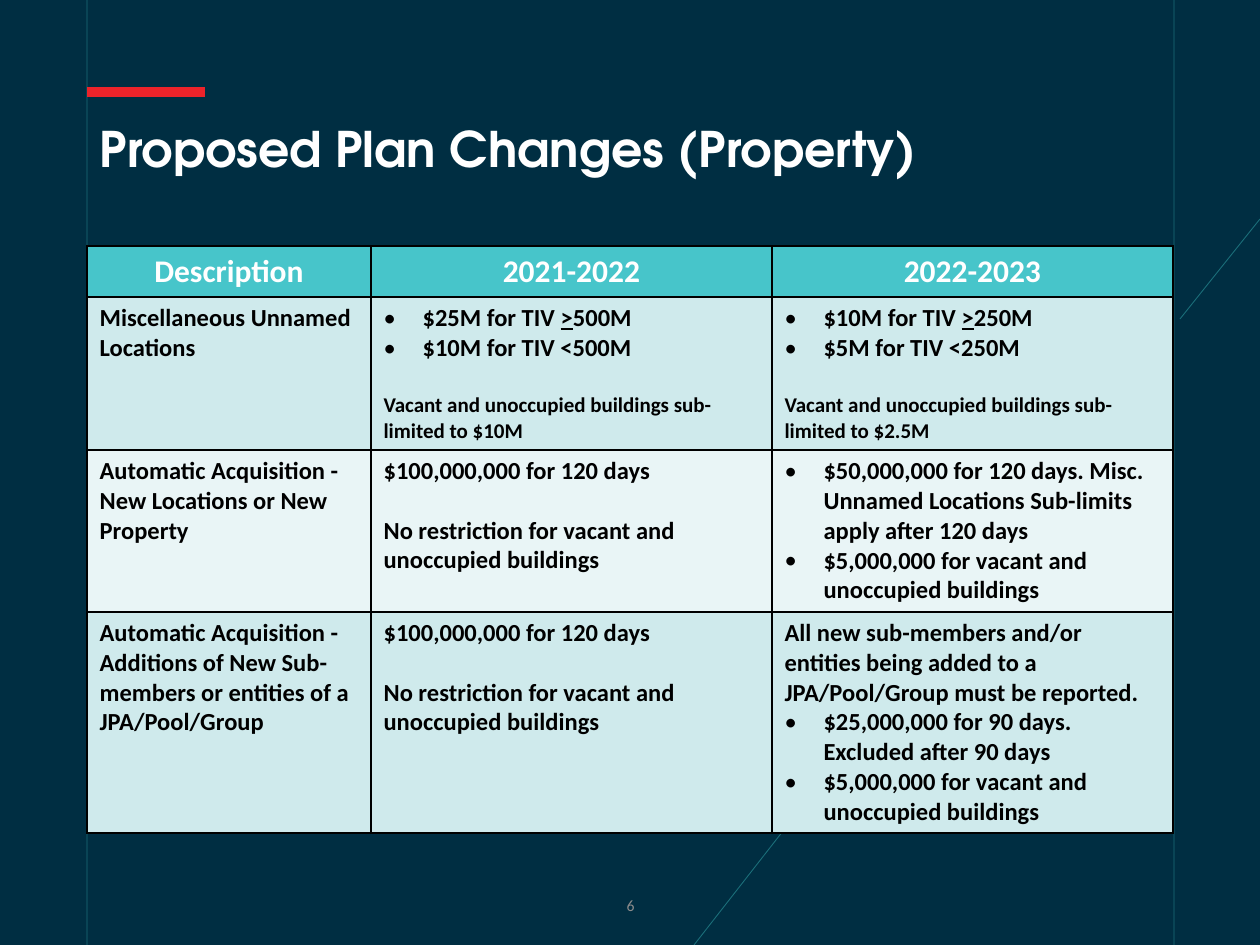
from lxml import etree
from pptx import Presentation
from pptx.dml.color import RGBColor
from pptx.enum.shapes import MSO_CONNECTOR
from pptx.enum.text import MSO_ANCHOR, MSO_AUTO_SIZE, PP_ALIGN
from pptx.oxml.ns import qn
from pptx.util import Pt

STRAIGHT = MSO_CONNECTOR.STRAIGHT
TOP, MIDDLE = MSO_ANCHOR.TOP, MSO_ANCHOR.MIDDLE
LEFT, CENTER = PP_ALIGN.LEFT, PP_ALIGN.CENTER
NO_FIT = MSO_AUTO_SIZE.NONE

NAVY = RGBColor(0x00, 0x2E, 0x42)
TEAL = RGBColor(0x2E, 0x9B, 0x9F)
RED = RGBColor(0xEC, 0x23, 0x2A)
GRAY = RGBColor(0x8C, 0x8C, 0x8C)
WHITE = RGBColor(0xFF, 0xFF, 0xFF)
BLACK = RGBColor(0x00, 0x00, 0x00)
HEADER = RGBColor(0x47, 0xC5, 0xCA)
BANDS = (RGBColor(0xCF, 0xEA, 0xEC), RGBColor(0xE9, 0xF5, 0xF6))

BODY_FONT, TITLE_FONT = "Calibri", "TeX Gyre Adventor"
SLIDE_W, SLIDE_H = 1260, 945
HEADINGS = ("Description", "2021-2022", "2022-2023")
COL_WIDTHS = (284, 401, 401)
ROW_HEIGHTS = (51, 153, 162, 221)
UNRESTRICTED = [
    ("plain", "$100,000,000 for 120 days"),
    ("gap", "No restriction for vacant and unoccupied buildings"),
]
VACANT = ("bullet", "$5,000,000 for vacant and unoccupied buildings")


def px(n):
    """Convert slide pixels to EMU."""
    return round(n * 914400 / 126)


def misc_limits(high, low, threshold, vacant):
    """Return the paragraphs for one year's unnamed-location limits."""
    return [
        ("bullet", f"{high} for TIV _>_{threshold}"),
        ("bullet", f"{low} for TIV <{threshold}"),
        ("note", f"Vacant and unoccupied buildings sub-limited to {vacant}"),
    ]


ROWS = (
    ([("plain", "Miscellaneous Unnamed Locations")],
     misc_limits("$25M", "$10M", "500M", "$10M"),
     misc_limits("$10M", "$5M", "250M", "$2.5M")),
    ([("plain", "Automatic Acquisition - New Locations or New Property")],
     UNRESTRICTED,
     [("bullet", "$50,000,000 for 120 days. Misc. Unnamed Locations "
                 "Sub-limits apply after 120 days"), VACANT]),
    ([("plain", "Automatic Acquisition - Additions of New Sub-members "
                "or entities of a JPA/Pool/Group")],
     UNRESTRICTED,
     [("plain", "All new sub-members and/or entities being added to a "
                "JPA/Pool/Group must be reported."),
      ("bullet", "$25,000,000 for 90 days. Excluded after 90 days"), VACANT]),
)


def style_font(font, size, color, name=BODY_FONT, bold=True):
    """Set the typeface, size, weight and colour of a font."""
    font.name, font.size, font.bold = name, Pt(size), bold
    font.color.rgb = color


def add_line(slide, x1, y1, x2, y2, color=TEAL, width=0.5, alpha=60):
    """Draw a flat straight line of the given opacity."""
    line = slide.shapes.add_connector(STRAIGHT, px(x1), px(y1), px(x2), px(y2))
    line.line.color.rgb = color
    line.line.width = Pt(width)
    sp_pr = line._element.spPr
    if alpha < 100:
        rgb = sp_pr.find(".//" + qn("a:srgbClr"))
        etree.SubElement(rgb, qn("a:alpha"), val=str(alpha * 1000))
    etree.SubElement(sp_pr, qn("a:effectLst"))


def add_backdrop(slide, x, y, w, h):
    """Colour the background and draw its guide lines and accent bar."""
    slide.background.fill.solid()
    slide.background.fill.fore_color.rgb = NAVY
    add_line(slide, x + 1168, y + 338, x + 694, y + h)
    for guide in (87, 1174):
        add_line(slide, x + guide, y, x + guide, y + h)
    add_line(slide, x + 87, y + 92, x + 205, y + 92, RED, 6, 100)
    add_line(slide, x + w, y + 219, x + 1180, y + 319)


def add_title(slide, x, y, w, h):
    """Fill and place the title placeholder."""
    sp = slide.shapes.title
    sp.left, sp.top, sp.width, sp.height = map(px, (x, y, w, h))
    tf = sp.text_frame
    tf.text = "Proposed Plan Changes (Property)"
    tf.word_wrap, tf.auto_size, tf.vertical_anchor = True, NO_FIT, TOP
    p = tf.paragraphs[0]
    p.alignment, p.line_spacing = LEFT, 0.9
    style_font(p.runs[0].font, 28, WHITE, TITLE_FONT)


def add_page_number(slide, x, y, w, h):
    """Place the centred page number."""
    tf = slide.shapes.add_textbox(*map(px, (x, y, w, h))).text_frame
    tf.word_wrap, tf.vertical_anchor = True, MIDDLE
    p = tf.paragraphs[0]
    p.text, p.alignment = "6", CENTER
    style_font(p.runs[0].font, 9, GRAY, bold=False)


def finish_cell(cell, color):
    """Give a cell black borders and a solid fill."""
    tc_pr = cell._tc.get_or_add_tcPr()
    for side in ("a:lnL", "a:lnR", "a:lnT", "a:lnB"):
        ln = etree.SubElement(tc_pr, qn(side), w=str(Pt(1)))
        fill = etree.SubElement(ln, qn("a:solidFill"))
        etree.SubElement(fill, qn("a:srgbClr"), val=str(BLACK))
    cell.fill.solid()
    cell.fill.fore_color.rgb = color


def write_paragraph(p, kind, text):
    """Write one body paragraph, underlining text between underscores."""
    if kind == "bullet":
        p_pr = p._p.get_or_add_pPr()
        p_pr.set("marL", str(px(39)))
        p_pr.set("indent", str(px(-39)))
        etree.SubElement(p_pr, qn("a:buFont"), typeface=BODY_FONT)
        etree.SubElement(p_pr, qn("a:buChar"), char="•")
    elif kind in ("gap", "note"):
        p.space_before = Pt(17)
    for i, part in enumerate(text.split("_")):
        r = p.add_run()
        r.text = part
        style_font(r.font, 12 if kind == "note" else 14, BLACK)
        if i % 2:
            r.font.underline = True


def add_changes_table(slide, x, y, w, h):
    """Build the table comparing the two policy years."""
    frame = slide.shapes.add_table(
        len(ROW_HEIGHTS), len(COL_WIDTHS), *map(px, (x, y, w, h)))
    table = frame.table
    for column, width in zip(table.columns, COL_WIDTHS):
        column.width = px(width)
    for row, height in zip(table.rows, ROW_HEIGHTS):
        row.height = px(height)
    for c, heading in enumerate(HEADINGS):
        cell = table.cell(0, c)
        finish_cell(cell, HEADER)
        p = cell.text_frame.paragraphs[0]
        p.text, p.alignment = heading, CENTER
        style_font(p.runs[0].font, 18, WHITE)
    for r, row in enumerate(ROWS):
        for c, items in enumerate(row):
            cell = table.cell(r + 1, c)
            finish_cell(cell, BANDS[r % 2])
            tf = cell.text_frame
            for i, (kind, text) in enumerate(items):
                p = tf.add_paragraph() if i else tf.paragraphs[0]
                write_paragraph(p, kind, text)


def main():
    """Build and save the slide."""
    prs = Presentation()
    prs.slide_width, prs.slide_height = px(SLIDE_W), px(SLIDE_H)
    slide = prs.slides.add_slide(prs.slide_layouts[5])
    add_backdrop(slide, 0, 0, SLIDE_W, SLIDE_H)
    add_page_number(slide, 489, 880, 283, 50)
    add_changes_table(slide, 87, 246, sum(COL_WIDTHS), sum(ROW_HEIGHTS))
    add_title(slide, 87, 119, 937, 103)
    prs.save("out.pptx")


if __name__ == "__main__":
    main()
